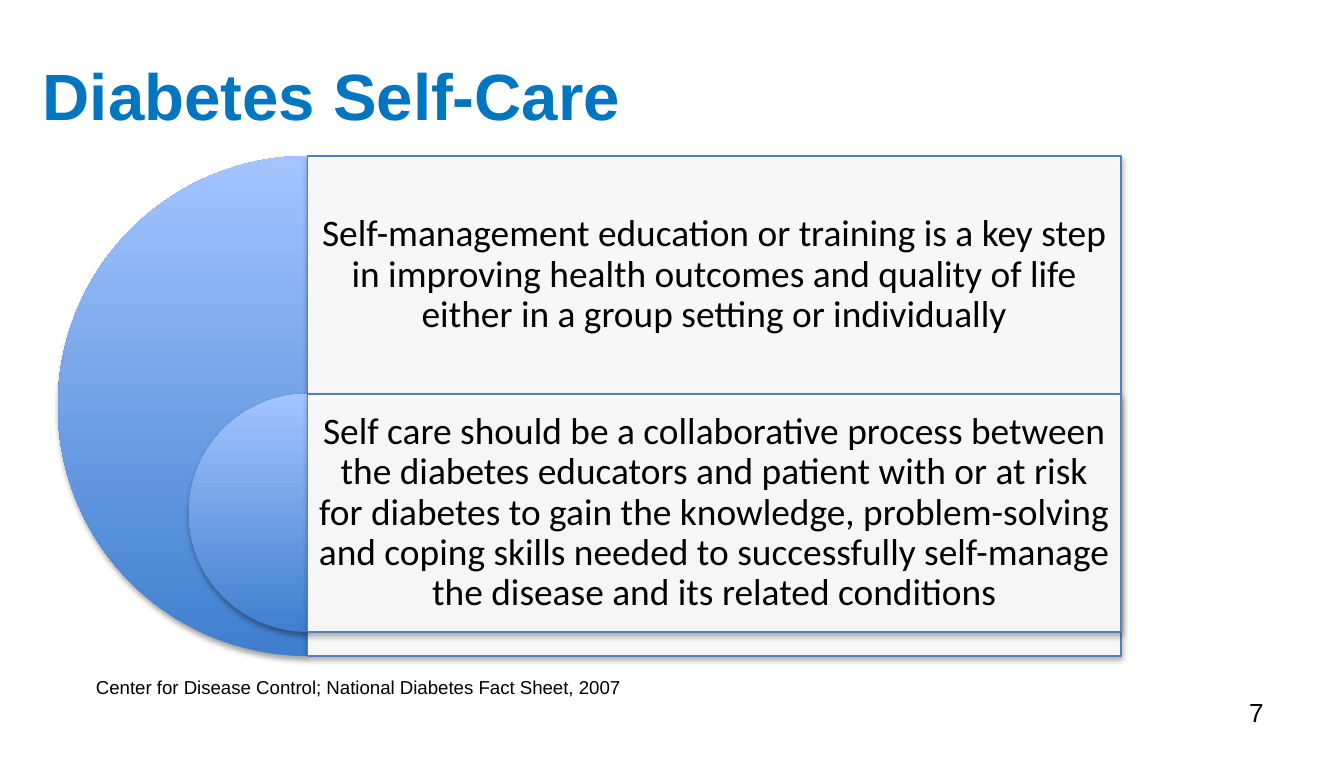
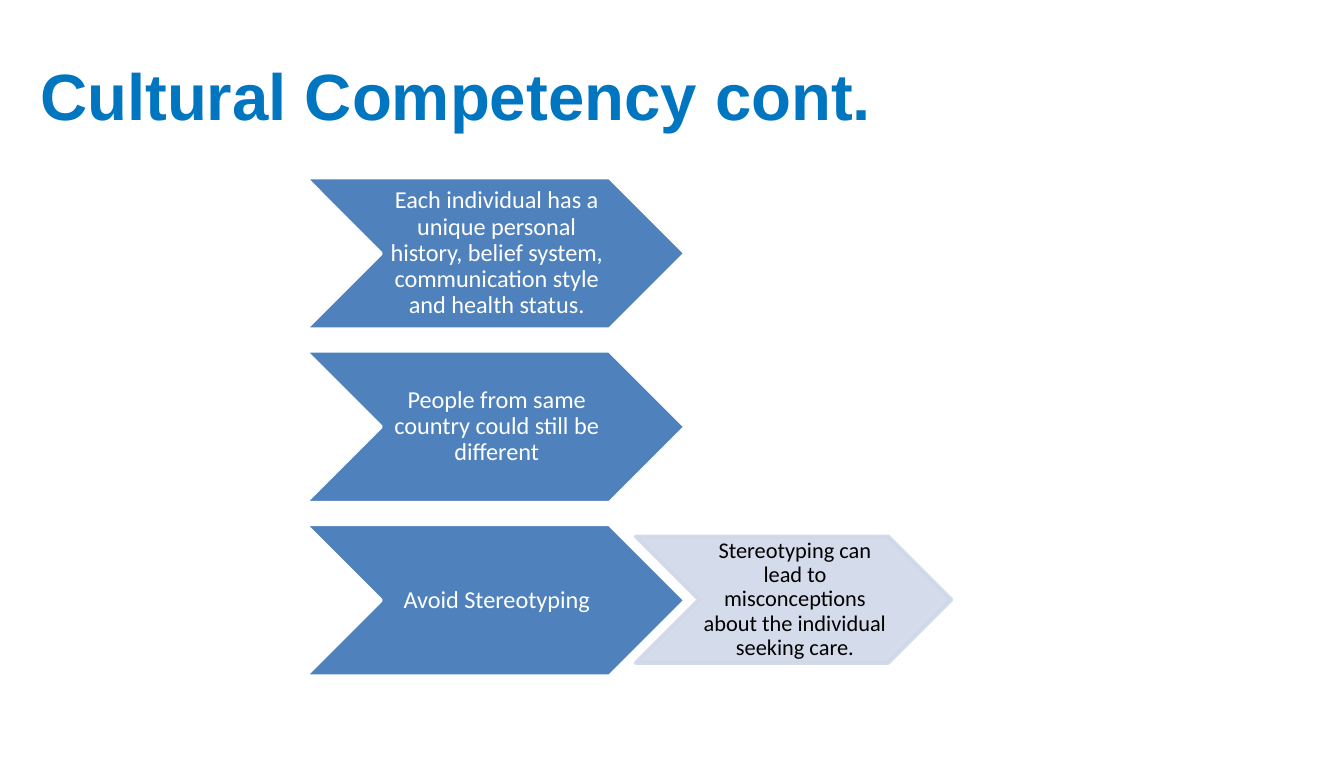
from lxml.etree import SubElement
from pptx import Presentation
from pptx.dml.color import RGBColor
from pptx.enum.shapes import MSO_SHAPE
from pptx.enum.text import MSO_ANCHOR, PP_ALIGN
from pptx.oxml.ns import qn
from pptx.util import Inches, Pt

BLUE, DARK, LIGHT, PALE = "4F81BD", "3F7FCE", "A4C4FF", "D0D8E8"
TITLE, WHITE, BLACK = "0076C0", "FFFFFF", "000000"

CARE = {
    "title": "Diabetes Self-Care",
    "points": [
        "Self-management education or training is a key step in improving health "
        "outcomes and quality of life either in a group setting or individually",
        "Self care should be a collaborative process between the diabetes educators "
        "and patient with or at risk for diabetes to gain the knowledge, "
        "problem-solving and coping skills needed to successfully self-manage the "
        "disease and its related conditions",
    ],
    "cite": "Center for Disease Control; National Diabetes Fact Sheet, 2007",
    "page": "7",
}
CULTURE = {
    "title": "Cultural Competency cont.",
    "steps": [
        "Each individual has a unique personal history, belief system, "
        "communication style and health status.",
        "People from same country could still be different",
        "Avoid Stereotyping",
    ],
    "result": "Stereotyping can lead to misconceptions about the individual "
              "seeking care.",
}


def color(text):
    return RGBColor.from_string(text)


def fade(part, alpha):
    for tint in list(part.iter(qn("a:srgbClr"))):
        SubElement(tint, qn("a:alpha"), val=str(alpha * 1000))


def write(slide, box, text, size, tint=BLACK, font="Arial", align=PP_ALIGN.LEFT,
          anchor=MSO_ANCHOR.TOP, inset=(0.1, 0.05, 0.1, 0.05), space=1.0, bold=False):
    frame = slide.shapes.add_textbox(*map(Inches, box)).text_frame
    frame.word_wrap = True
    frame.vertical_anchor = anchor
    (frame.margin_left, frame.margin_top,
     frame.margin_right, frame.margin_bottom) = map(Inches, inset)
    para = frame.paragraphs[0]
    para.alignment = align
    para.line_spacing = space
    run = para.add_run()
    run.text = text
    run.font.name = font
    run.font.size = Pt(size)
    run.font.bold = bold
    run.font.color.rgb = color(tint)


def label(slide, box, text, size, tint, inset):
    write(slide, box, text, size, tint, "Calibri", PP_ALIGN.CENTER,
          MSO_ANCHOR.MIDDLE, inset, 0.9)


def draw(slide, kind, box, fill=None, line=None, width=1, alpha=None):
    shape = slide.shapes.add_shape(kind, *map(Inches, box))
    if fill:
        shape.fill.solid()
        shape.fill.fore_color.rgb = color(fill)
    else:
        shape.fill.gradient()
        shape.fill.gradient_angle = 90
        for stop, tint in zip(shape.fill.gradient_stops, (DARK, LIGHT)):
            stop.color.rgb = color(tint)
    if alpha:
        fade(shape._element.spPr, alpha)
    if line:
        shape.line.color.rgb = color(line)
        shape.line.width = Pt(width)
    else:
        shape.line.fill.background()
    shape.shadow.inherit = False
    return shape


def shade(shape):
    effect = shape._element.spPr.find(qn("a:effectLst"))
    outer = SubElement(effect, qn("a:outerShdw"), blurRad=str(Pt(3.1)),
                       dist=str(Pt(1.8)), dir="5400000", rotWithShape="0")
    SubElement(outer, qn("a:srgbClr"), val=BLACK)
    fade(outer, 35)


def start(deck, title, left):
    slide = deck.slides.add_slide(deck.slide_layouts[6])
    write(slide, (left, 0.23, 9 - left, 0.94), title, 35, TITLE,
          anchor=MSO_ANCHOR.MIDDLE, bold=True)
    return slide


def care(deck):
    slide = start(deck, CARE["title"], 0.22)
    mid, top, wide, row = 2.29, 1.16, 6.05, 1.77
    for i, (text, size) in enumerate(zip(CARE["points"], (3.72, row))):
        y = top + i * row
        pie = draw(slide, MSO_SHAPE.PIE, (mid - size / 2, y, size, size))
        pie.adjustments[0], pie.adjustments[1] = 54, 162
        shade(pie)
        shade(draw(slide, MSO_SHAPE.RECTANGLE, (mid, y, wide, size),
                   WHITE, BLUE, 0.75, 90))
        label(slide, (mid, y, wide, row), text, 20, BLACK, (0.08,) * 4)
    write(slide, (0.22, 5.01, 4.49, 0.24), CARE["cite"], 10,
          align=PP_ALIGN.RIGHT, space=0.8)
    write(slide, (7.17, 5.13, 2.33, 0.39), CARE["page"], 14, align=PP_ALIGN.RIGHT)


def arrow(slide, box, text, size, fill, line, tint, alpha=None):
    x, y, wide, high = box
    shape = draw(slide, MSO_SHAPE.CHEVRON, box, fill, line, 2, alpha)
    if alpha:
        fade(shape._element.spPr.find(qn("a:ln")), alpha)
    label(slide, (x + high / 2, y, wide - high, high), text, size, tint,
          (0.02, 0.01, 0, 0.01))


def culture(deck):
    slide = start(deck, CULTURE["title"], 0.2)
    for i, text in enumerate(CULTURE["steps"]):
        arrow(slide, (2.27, 1.32 + i * 1.29, 2.83, 1.13), text, 13,
              BLUE, WHITE, WHITE)
    arrow(slide, (4.73, 3.99, 2.35, 0.94), CULTURE["result"], 12,
          PALE, PALE, BLACK, 90)


def main():
    deck = Presentation()
    deck.slide_width, deck.slide_height = Inches(10), Inches(5.63)
    care(deck)
    culture(deck)
    deck.save("out.pptx")


if __name__ == "__main__":
    main()
